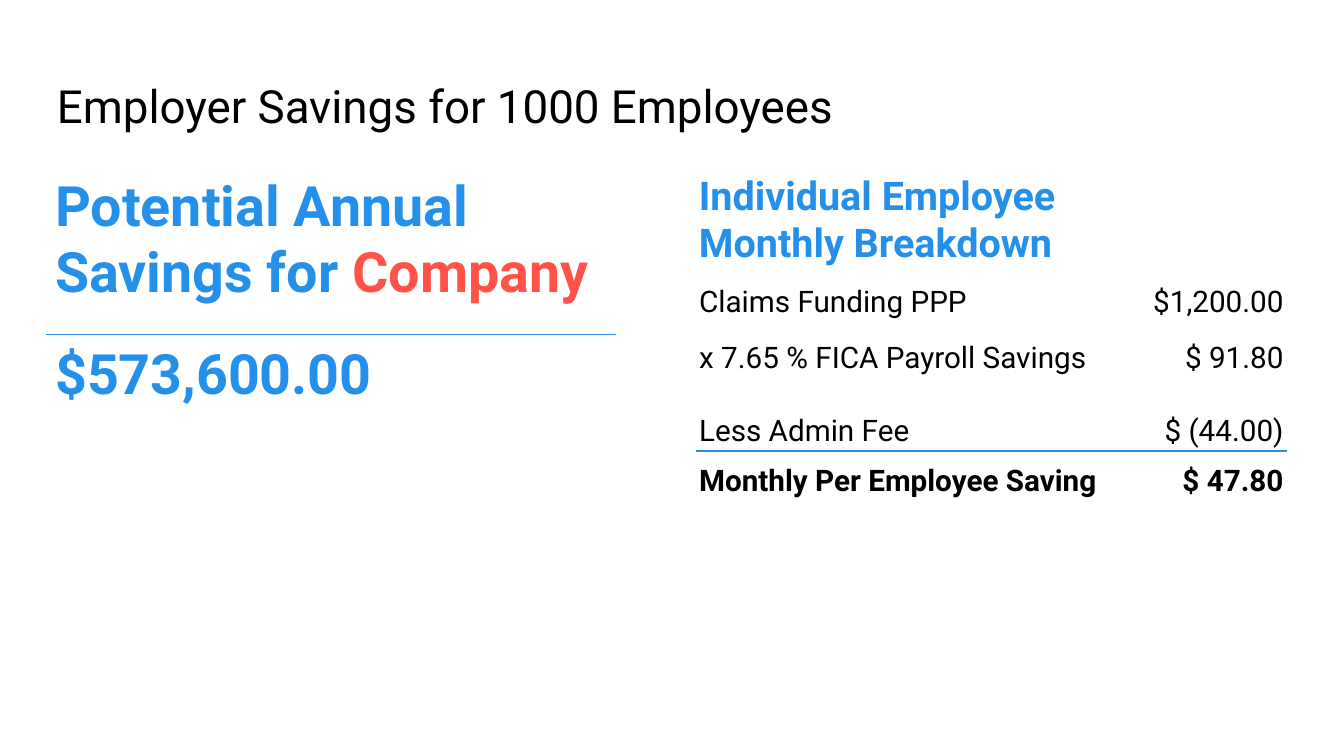
from dataclasses import dataclass

from lxml.etree import SubElement
from pptx import Presentation
from pptx.dml.color import RGBColor
from pptx.enum.text import MSO_ANCHOR, PP_ALIGN
from pptx.oxml.ns import qn
from pptx.util import Inches, Pt


@dataclass(frozen=True)
class Theme:
    """Colours, font and type sizes of the slide."""
    font: str = "Roboto"
    blue: str = "2490E9"
    red: str = "FF5349"
    black: str = "000000"
    white: str = "FFFFFF"
    title: int = 37
    claim: int = 45
    head: int = 32
    body: int = 24
    rule: float = 1.5
    hair: float = 0.75


THEME = Theme()
COSTS = [
    ("Claims Funding PPP", "$1,200.00", 0.56),
    ("x 7.65 % FICA Payroll Savings", "$ 91.80", 0.63),
    ("Less Admin Fee", "$ (44.00)", 0.83),
    ("Monthly Per Employee Saving", "$ 47.80", 0.56),
]


def style(run, size, color, bold=False):
    """Format one run."""
    font = run.font
    font.name, font.size, font.bold = THEME.font, Pt(size), bold
    font.color.rgb = RGBColor.from_string(color)


def add_text(slide, box, text, size, color, bold=False, pad=(0.1, 0.05)):
    """Add a wrapped line of text in the given box."""
    frame = slide.shapes.add_textbox(*map(Inches, box)).text_frame
    frame.word_wrap = True
    frame.margin_left = frame.margin_right = Inches(pad[0])
    frame.margin_top = frame.margin_bottom = Inches(pad[1])
    frame.text = text
    style(frame.paragraphs[0].runs[0], size, color, bold)


def add_grid(slide, box, cols, rows):
    """Add a plain table with the given column widths and row heights."""
    table = slide.shapes.add_table(len(rows), len(cols), *map(Inches, box)).table
    table.first_row = table.horz_banding = False
    for col, width in zip(table.columns, cols):
        col.width = Inches(width)
    for row, height in zip(table.rows, rows):
        row.height = Inches(height)
    return table


def dress(cell, pad, edges):
    """Set the margins and borders of a cell and clear its fill."""
    cell.margin_left = cell.margin_right = Inches(pad[0])
    cell.margin_top = cell.margin_bottom = Inches(pad[1])
    props = cell._tc.get_or_add_tcPr()
    for side in "LRTB":
        ruled = side in edges
        width = Pt(THEME.rule if ruled else THEME.hair)
        line = SubElement(props, qn(f"a:ln{side}"), w=str(width))
        fill = SubElement(line, qn("a:solidFill"))
        SubElement(fill, qn("a:srgbClr"), val=THEME.blue if ruled else THEME.white)
    cell.fill.background()


def add_claim(slide, left, top, width):
    """Add the annual savings claim with its ruled total."""
    table = add_grid(slide, (left, top, width, 2.16), [width], [1.89, 0.27])
    parts = [
        [("Potential Annual Savings for ", THEME.blue), ("Company", THEME.red)],
        [("$573,600.00", THEME.blue)],
    ]
    for index, (runs, edge) in enumerate(zip(parts, "BT")):
        cell = table.cell(index, 0)
        dress(cell, (0.1, 0.1), edge)
        para = cell.text_frame.paragraphs[0]
        for text, color in runs:
            run = para.add_run()
            run.text = text
            style(run, THEME.claim, color, True)


def add_costs(slide, left, top, width):
    """Add the monthly breakdown: a heading above the cost table."""
    add_text(slide, (left, top, 4.78, 1.18), "Individual Employee Monthly Breakdown",
             THEME.head, THEME.blue, True)
    rows = [height for *_, height in COSTS]
    last = len(COSTS) - 1
    table = add_grid(slide, (left + 0.07, top + 1.18, width, sum(rows)),
                     [width - 1.89, 1.89], rows)
    for index, (label, value, _) in enumerate(COSTS):
        edge = {last - 1: "B", last: "T"}.get(index, "")
        for col, text in enumerate((label, value)):
            cell = table.cell(index, col)
            dress(cell, (0.03, 0.02), edge)
            cell.vertical_anchor = MSO_ANCHOR.BOTTOM
            para = cell.text_frame.paragraphs[0]
            para.text = text
            para.line_spacing = 1.15
            para.alignment = PP_ALIGN.RIGHT if col else PP_ALIGN.LEFT
            style(para.runs[0], THEME.body, THEME.black, index == last)


def main():
    """Build and save the slide."""
    deck = Presentation()
    deck.slide_width, deck.slide_height = Inches(15.11), Inches(8.5)
    slide = deck.slides.add_slide(deck.slide_layouts[6])
    add_text(slide, (0.52, 0.75, 14.08, 0.95), "Employer Savings for 1000 Employees",
             THEME.title, THEME.black, pad=(0.12, 0.12))
    add_claim(slide, 0.52, 1.87, 6.4)
    add_costs(slide, 7.76, 1.87, 6.63)
    deck.save("out.pptx")


if __name__ == "__main__":
    main()
